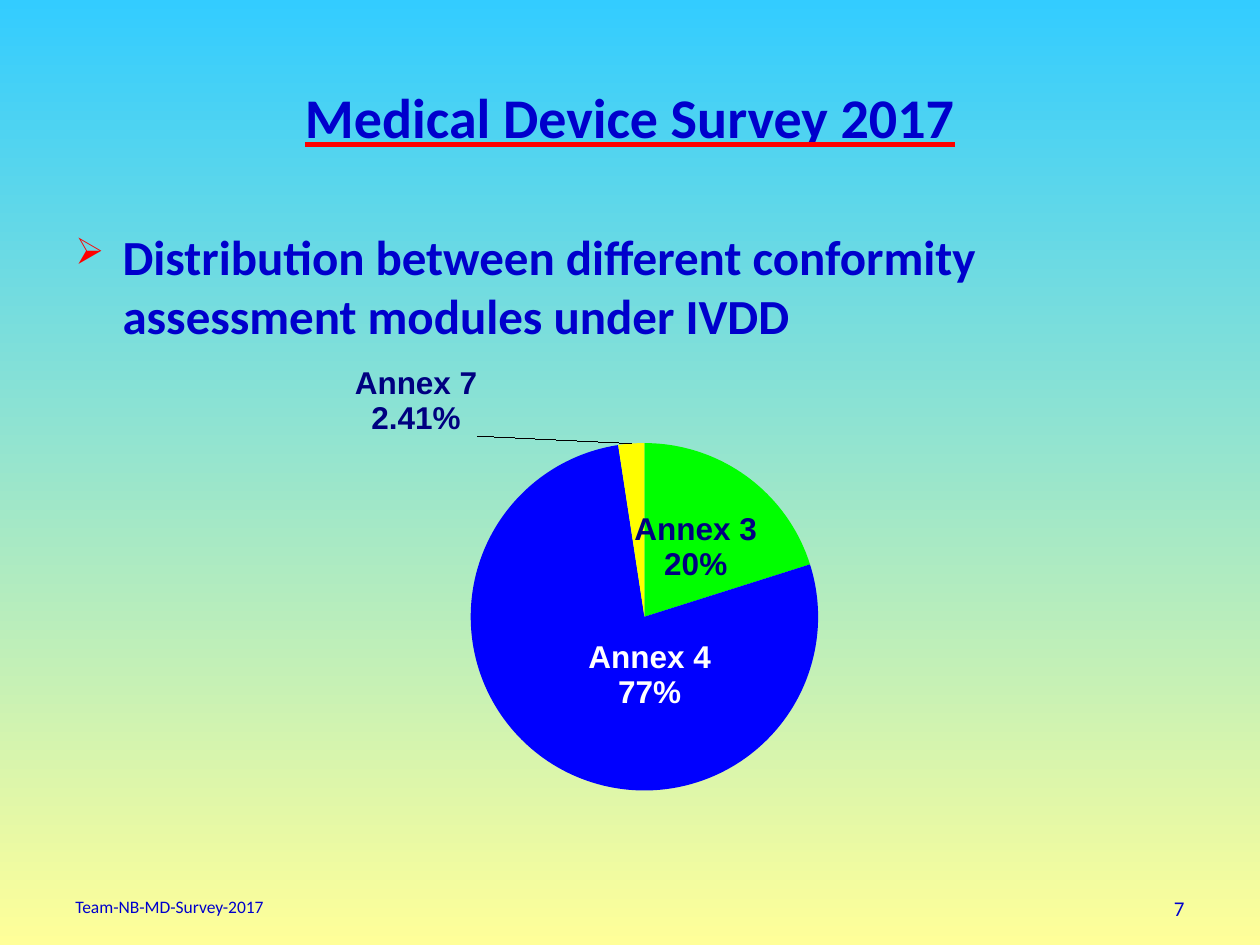
"""Build the slide on conformity assessment modules under IVDD."""
from lxml.etree import SubElement
from pptx import Presentation
from pptx.chart.data import CategoryChartData
from pptx.dml.color import RGBColor
from pptx.enum.chart import XL_CHART_TYPE as ChartType, XL_LABEL_POSITION as LabelPos
from pptx.enum.text import MSO_ANCHOR as Anchor, PP_ALIGN as Align
from pptx.oxml import parse_xml
from pptx.oxml.ns import nsdecls, qn
from pptx.util import Pt

NAVY = "0000CC"
RED = "FF0000"


def color(value):
    return RGBColor.from_string(value)


def add_text(text, left, top, width, height, size, bold=False, align=Align.LEFT,
             anchor=Anchor.TOP, underline=None, bullet=None):
    box = page.shapes.add_textbox(Pt(left), Pt(top), Pt(width), Pt(height))
    frame = box.text_frame
    frame.word_wrap = True
    frame.vertical_anchor = anchor
    para = frame.paragraphs[0]
    para.alignment = align
    if bullet:
        props = para._p.get_or_add_pPr()
        props.set("marL", str(Pt(27)))
        props.set("indent", str(-Pt(27)))
        tint = SubElement(props, qn("a:buClr"))
        SubElement(tint, qn("a:srgbClr"), val=RED)
        SubElement(props, qn("a:buSzPct"), val="75000")
        SubElement(props, qn("a:buChar"), char=bullet)
    span = para.add_run()
    span.text = text
    span.font.name = "Calibri"
    span.font.size = Pt(size)
    span.font.bold = bold
    span.font.color.rgb = color(NAVY)
    if underline:
        span.font.underline = True
        span.font._element.find(qn("a:latin")).addprevious(parse_xml(
            f'<a:uFill {nsdecls("a")}><a:solidFill><a:srgbClr val="{underline}"/>'
            '</a:solidFill></a:uFill>'))


deck = Presentation()
deck.slide_width, deck.slide_height = Pt(720), Pt(540)
page = deck.slides.add_slide(deck.slide_layouts[6])

backdrop = page.background.fill
backdrop.gradient()
backdrop.gradient_angle = 270
for stop, value in zip(backdrop.gradient_stops, ("33CCFF", "FFFF99")):
    stop.color.rgb = color(value)

add_text("Medical Device Survey 2017", 36, 21.6, 648, 90, 32, bold=True,
         align=Align.CENTER, anchor=Anchor.MIDDLE, underline=RED)
add_text("7", 516, 508.3, 168, 21, 12, align=Align.RIGHT)
add_text("Distribution between\u00a0different conformity assessment modules under IVDD",
         36, 126, 648, 59, 28, bold=True, bullet="➢")
add_text("Team-NB-MD-Survey-2017", 36, 508.3, 228, 21, 10)

slices = [
    ("Annex 3", 20, "00FF00", "000080", "0%", LabelPos.CENTER, (0, 0)),
    ("Annex 4", 77, "0000FF", "FFFFFF", "0%", LabelPos.CENTER, (0.05, -0.03)),
    ("Annex 7", 2.4, "FFFF00", "000080", "0.00%", LabelPos.OUTSIDE_END, (-0.21, 0)),
]
data = CategoryChartData()
data.categories = [row[0] for row in slices]
data.add_series("Series 1", [row[1] for row in slices])
chart = page.shapes.add_chart(ChartType.PIE, Pt(76.3), Pt(199.4), Pt(584), Pt(297.4), data).chart
chart.has_title = False
chart.has_legend = False
chart.font.name = "Arial"
chart.font.size = Pt(10)
chart.font.color.rgb = color("000000")

plot = chart.plots[0]
plot.vary_by_categories = True
series = plot.series[0]
labels = series.data_labels
labels.show_value = False
labels.show_percentage = True
labels.show_category_name = True

for index, (name, amount, fill, ink, code, position, shift) in enumerate(slices):
    point = series.points[index]
    point.format.fill.solid()
    point.format.fill.fore_color.rgb = color(fill)
    label = point.data_label
    label.position = position
    label.font.name = "Arial"
    label.font.size = Pt(18)
    label.font.bold = True
    label.font.color.rgb = color(ink)
    node = series._element.xpath(f"c:dLbls/c:dLbl[c:idx/@val={index}]")[0]
    for tag, flag in (("showVal", "0"), ("showCatName", "1"), ("showPercent", "1")):
        node.find(qn(f"c:{tag}")).set("val", flag)
    SubElement(node, qn("c:separator")).text = "\n"
    node.find(qn("c:idx")).addnext(parse_xml(
        f'<c:numFmt {nsdecls("c")} formatCode="{code}" sourceLinked="0"/>'))
    if any(shift):
        node.find(qn("c:idx")).addnext(parse_xml(
            f'<c:layout {nsdecls("c")}><c:manualLayout>'
            f'<c:x val="{shift[0]}"/><c:y val="{shift[1]}"/></c:manualLayout></c:layout>'))

area = chart._chartSpace.chart.plotArea
for old in area.findall(qn("c:layout")):
    area.remove(old)
area.insert(0, parse_xml(
    f'<c:layout {nsdecls("c")}><c:manualLayout><c:layoutTarget val="inner"/>'
    '<c:xMode val="edge"/><c:yMode val="edge"/><c:x val="0.33"/><c:y val="0.18"/>'
    '<c:w val="0.34"/><c:h val="0.67"/></c:manualLayout></c:layout>'))

deck.save("out.pptx")
